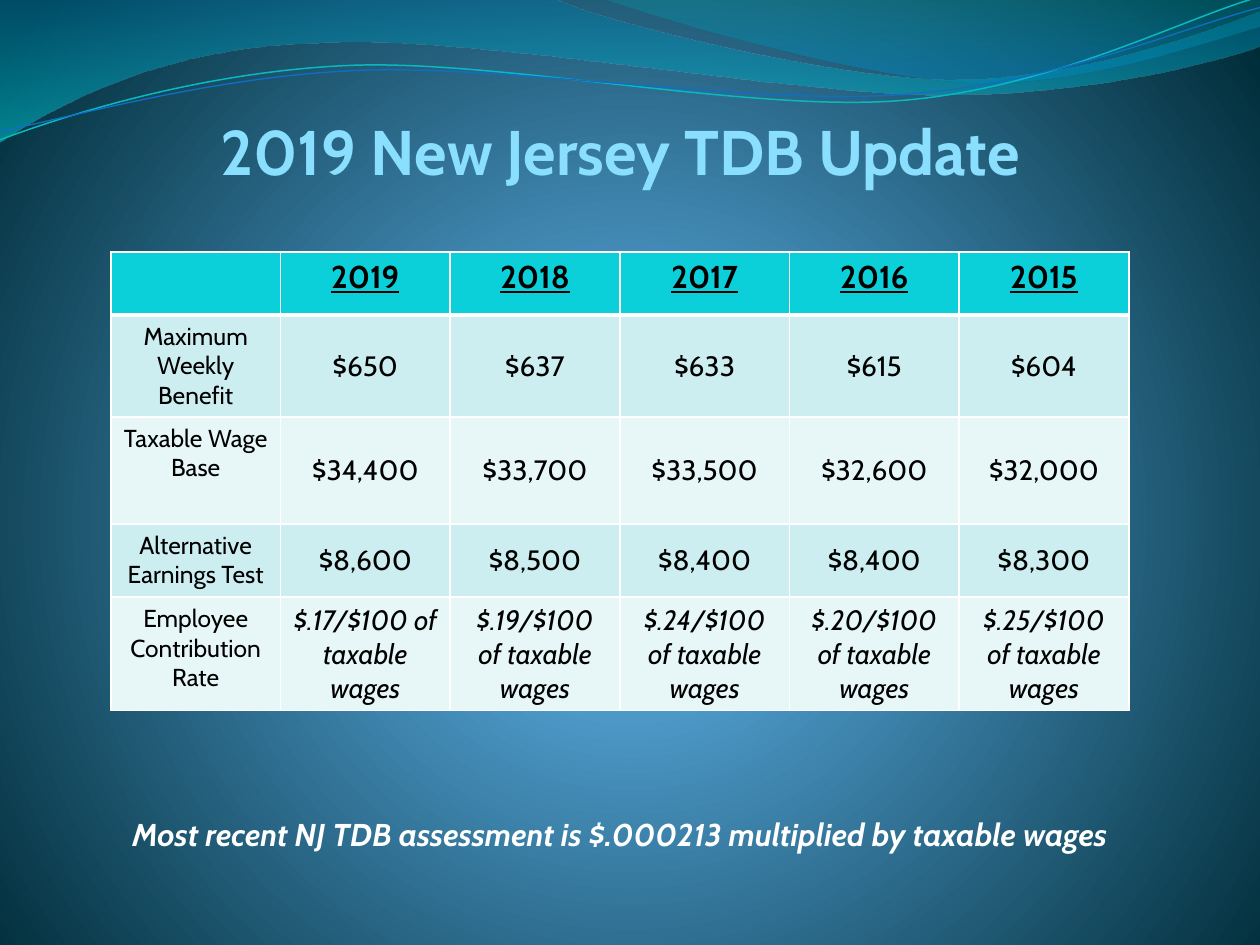
from lxml.etree import SubElement
from pptx import Presentation
from pptx.dml.color import RGBColor
from pptx.enum.text import MSO_ANCHOR, PP_ALIGN
from pptx.oxml import parse_xml
from pptx.oxml.ns import nsdecls, qn
from pptx.util import Inches, Pt

FONT = "Cabin"
WHITE = RGBColor(0xFF, 0xFF, 0xFF)
BLACK = RGBColor(0x00, 0x00, 0x00)
SKY = RGBColor(0x8A, 0xDF, 0xFF)
HEADER_FILL = RGBColor(0x0B, 0xD0, 0xD9)
BAND_FILLS = (RGBColor(0xE7, 0xF7, 0xF8), RGBColor(0xCC, 0xEE, 0xF1))
TEAL_LINE = RGBColor(0x0A, 0xB8, 0xBF)
BLUE_LINE = RGBColor(0x0F, 0x6F, 0xC6)
BACKDROP = ((0, RGBColor(0x4A, 0xA0, 0xD6), 100),
            (25, RGBColor(0x4C, 0x98, 0xC7), 100),
            (100, RGBColor(0x00, 0x2C, 0x38), 100))
WIDE_WAVE_FILL = ((0, RGBColor(0x00, 0x74, 0xA1), 45),
                  (100, RGBColor(0x00, 0xC6, 0xCF), 55))
CORNER_WAVE_FILL = ((0, RGBColor(0x00, 0xA1, 0xA9), 30),
                    (80, RGBColor(0x00, 0x8B, 0xBF), 45))

TITLE = "2019 New Jersey TDB Update"
FOOTNOTE = "Most recent NJ TDB assessment is $.000213 multiplied by taxable wages"
YEARS = ["2019", "2018", "2017", "2016", "2015"]
RATES = [".17", ".19", ".24", ".20", ".25"]
ROWS = [
    ["", *YEARS],
    ["Maximum Weekly Benefit", "$650", "$637", "$633", "$615", "$604"],
    ["Taxable Wage Base", "$34,400", "$33,700", "$33,500", "$32,600", "$32,000"],
    ["Alternative Earnings Test", "$8,600", "$8,500", "$8,400", "$8,400", "$8,300"],
    ["Employee Contribution Rate", *(f"${rate}/$100 of taxable wages" for rate in RATES)],
]
ROW_HEIGHTS = [0.5, 0.81, 0.85, 0.58, 0.9]
TABLE_BOX = (0.88, 2, 8.08, sum(ROW_HEIGHTS))
TITLE_BOX = (0.67, 0, 8.5, 1.49)
FOOTNOTE_BOX = (0.67, 5.25, 8.5, 1.52)

WIDE_WAVE = [
    (0, 0), (4.4, -0.01), (4.76, 0.17, 6.64, 0.63, 7.58, 0.63),
    (8.53, 0.63, 9.58, 0.26, 10, 0.09), (10.01, 0.36),
    (9.83, 0.44, 8.7, 0.76, 7.46, 0.75), (6.22, 0.75, 3.82, 0.28, 2.57, 0.34),
    (1.29, 0.36, 0.46, 0.83, -0.01, 1.13),
]
CORNER_WAVE = [
    (4.79, -0.01), (5.09, 0.11, 6.82, 0.62, 7.69, 0.65),
    (8.56, 0.69, 9.61, 0.32, 10, 0.21), (10, 0),
]
TEAL_CURVE = [
    (0, 1.11), (0.48, 0.93, 1.58, 0.57, 2.77, 0.52),
    (3.95, 0.47, 5.93, 0.89, 7.13, 0.8), (8.33, 0.71, 9.38, 0.15, 9.98, -0.02),
]
BLUE_CURVE = [
    (0, 1.04), (0.47, 0.96, 1.64, 0.61, 2.83, 0.56),
    (4.03, 0.51, 5.97, 0.84, 7.17, 0.75), (8.36, 0.67, 9.41, 0.21, 10, 0.06),
]


def add_wave(slide, segments, closed):
    anchors = [tuple(map(Inches, segment[-2:])) for segment in segments]
    builder = slide.shapes.build_freeform(*anchors[0], scale=1)
    builder.add_line_segments(anchors[1:], close=closed)
    shape = builder.convert_to_shape()
    shape.shadow.inherit = False
    lines = list(shape.element.iter(qn("a:lnTo")))
    for line, segment in zip(lines, segments[1:]):
        if len(segment) == 2:
            continue
        line.tag = qn("a:cubicBezTo")
        for position in (0, 2):
            x, y = map(Inches, segment[position:position + 2])
            control = parse_xml(f'<a:pt {nsdecls("a")} x="{x - shape.left}" y="{y - shape.top}"/>')
            line.insert(position // 2, control)
    return shape


def set_gradient(fill, owner, stops, direction):
    fill.gradient()
    gradient = owner.find(".//" + qn("a:gradFill"))
    for child in list(gradient):
        gradient.remove(child)
    stop_list = SubElement(gradient, qn("a:gsLst"))
    for position, color, opacity in stops:
        stop = SubElement(stop_list, qn("a:gs"), pos=str(position * 1000))
        swatch = SubElement(stop, qn("a:srgbClr"), val=str(color))
        if opacity < 100:
            SubElement(swatch, qn("a:alpha"), val=str(opacity * 1000))
    gradient.append(parse_xml(direction))


def add_text(frame, text, size, color, bold=False, italic=False, underline=False):
    paragraph = frame.paragraphs[0]
    paragraph.alignment = PP_ALIGN.CENTER
    run = paragraph.add_run()
    run.text = text
    font = run.font
    font.name, font.size, font.color.rgb = FONT, Pt(size), color
    font.bold, font.italic, font.underline = bold, italic, underline


def add_caption(slide, box, text, size, color, italic=False):
    frame = slide.shapes.add_textbox(*map(Inches, box)).text_frame
    frame.word_wrap = True
    frame.vertical_anchor = MSO_ANCHOR.BOTTOM
    frame.margin_left = frame.margin_right = frame.margin_top = frame.margin_bottom = 0
    add_text(frame, text, size, color, bold=True, italic=italic)


def set_borders(cell, top, bottom):
    properties = cell._tc.get_or_add_tcPr()
    for index, (side, width) in enumerate((("L", 1), ("R", 1), ("T", top), ("B", bottom))):
        properties.insert(index, parse_xml(
            f'<a:ln{side} {nsdecls("a")} w="{Pt(width)}"><a:solidFill>'
            f'<a:srgbClr val="{WHITE}"/></a:solidFill></a:ln{side}>'))


def add_benefit_table(slide):
    table = slide.shapes.add_table(len(ROWS), len(ROWS[0]), *map(Inches, TABLE_BOX)).table
    for row, height in zip(table.rows, ROW_HEIGHTS):
        row.height = Inches(height)
    for r, values in enumerate(ROWS):
        for c, text in enumerate(values):
            cell = table.cell(r, c)
            header = r == 0
            cell.fill.solid()
            cell.fill.fore_color.rgb = HEADER_FILL if header else BAND_FILLS[r % 2]
            set_borders(cell, 3 if r == 1 else 1, 3 if header else 1)
            if r and c:
                cell.vertical_anchor = MSO_ANCHOR.MIDDLE
            if text:
                size = 18 if header else 16 if c else 14
                italic = r == len(ROWS) - 1 and c > 0
                add_text(cell.text_frame, text, size, BLACK, header, italic, header)


def main():
    presentation = Presentation()
    presentation.slide_width, presentation.slide_height = Inches(10), Inches(7.5)
    slide = presentation.slides.add_slide(presentation.slide_layouts[6])
    radial = (f'<a:path {nsdecls("a")} path="circle"><a:fillToRect l="10000" t="110000" '
              'r="10000" b="100000"/></a:path>')
    vertical = f'<a:lin {nsdecls("a")} ang="5400000" scaled="1"/>'
    set_gradient(slide.background.fill, slide.element, BACKDROP, radial)
    for segments, stops in ((WIDE_WAVE, WIDE_WAVE_FILL), (CORNER_WAVE, CORNER_WAVE_FILL)):
        wave = add_wave(slide, segments, True)
        wave.line.fill.background()
        set_gradient(wave.fill, wave.element, stops, vertical)
    for segments, color, width in ((TEAL_CURVE, TEAL_LINE, 0.85), (BLUE_CURVE, BLUE_LINE, 0.75)):
        curve = add_wave(slide, segments, False)
        curve.fill.background()
        curve.line.color.rgb = color
        curve.line.width = Pt(width)
    add_caption(slide, TITLE_BOX, TITLE, 36, SKY)
    add_benefit_table(slide)
    add_caption(slide, FOOTNOTE_BOX, FOOTNOTE, 18, WHITE, italic=True)
    presentation.save("out.pptx")


if __name__ == "__main__":
    main()
